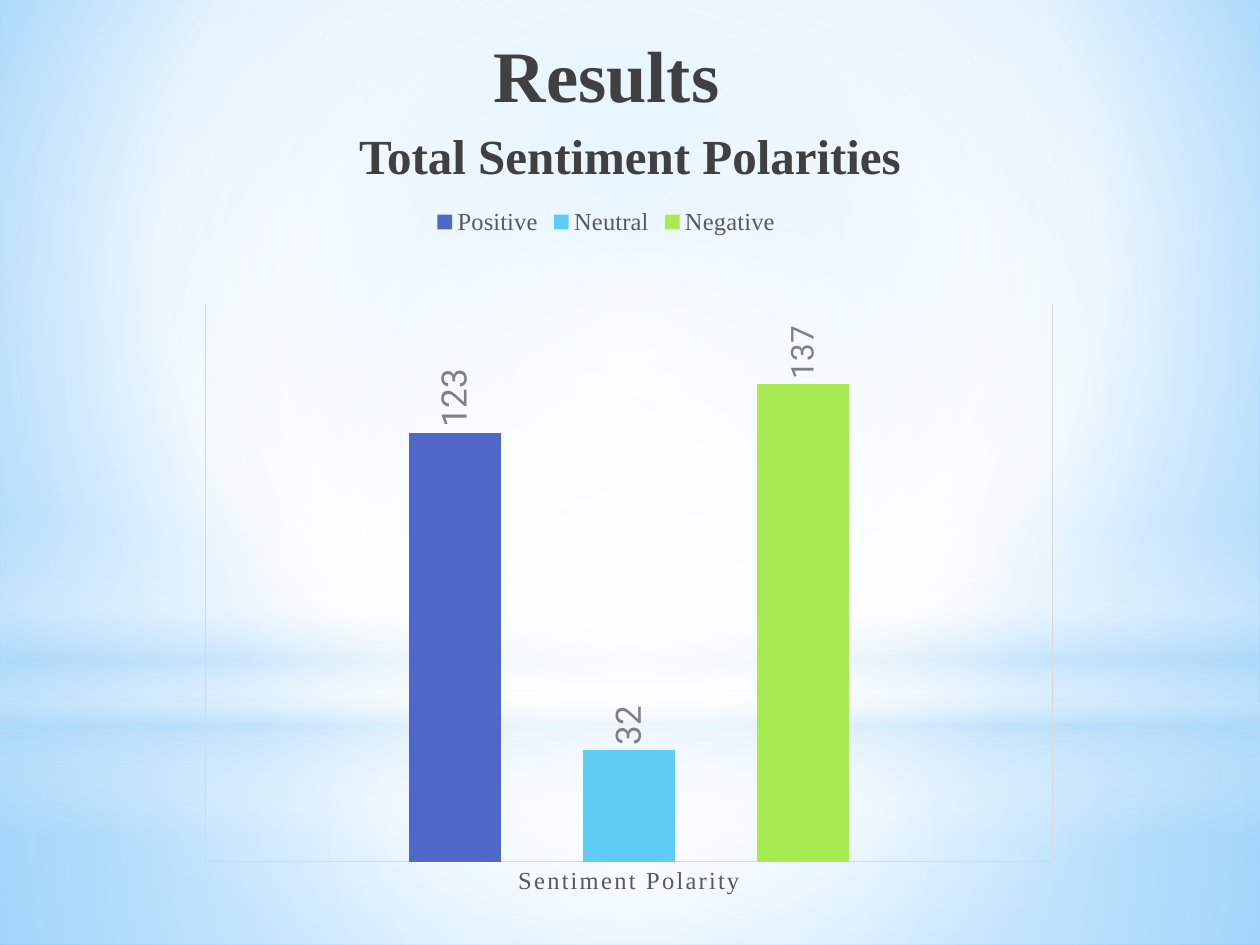
"""Build the Results slide with its sentiment polarity chart."""
import pptx
import pptx.chart.data
import pptx.dml.color
import pptx.enum.chart
import pptx.enum.shapes
import pptx.enum.text
import pptx.oxml
import pptx.oxml.ns
import pptx.util

Pt = pptx.util.Pt
qn = pptx.oxml.ns.qn
SERIF = "Times New Roman"
SHAPES = pptx.enum.shapes.MSO_SHAPE
CENTER = "50 50 50 50"
BANDS = [
    (SHAPES.RECTANGLE, (0, 401.8, 720, 138.2), CENTER,
     [(0, "FFFFFF", 91), (37, "FFFFFF", 76), (100, "B4DCFA", 79)]),
    (SHAPES.RECTANGLE, (0, 0, 720, 401.8), CENTER,
     [(0, "FFFFFF", 89), (48, "FFFFFF", 62), (100, "B4DCFA", 79)]),
    (SHAPES.RECTANGLE, (0, 296.6, 720, 180), None,
     [(0, "FFFFFF", 0), (29, "FFFFFF", 30), (45, "B4DCFA", 40),
      (55, "FFFFFF", 26), (65, "B4DCFA", 60), (100, "FFFFFF", 0)]),
    (SHAPES.OVAL, (0, 126, 720, 401.8), CENTER,
     [(0, "FFFFFF", 100), (56, "FFFFFF", 0)]),
]
SERIES = [
    ("Positive", 123, "4E67C8", 20),
    ("Neutral", 32, "5ECCF3", 20),
    ("Negative", 137, "A7EA52", 18),
]


def color(value):
    """Turn a hex string into a colour."""
    return pptx.dml.color.RGBColor.from_string(value)


def apply(target, values):
    """Set each attribute of the target from a dict."""
    for name, value in values.items():
        setattr(target, name, value)


def set_font(font, size, value, name=SERIF, bold=False):
    """Format a font."""
    apply(font, {"size": Pt(size), "name": name, "bold": bold})
    font.color.rgb = color(value)


def place(shape, box):
    """Move and size a shape by a box in points."""
    apply(shape, dict(zip(("left", "top", "width", "height"), map(Pt, box))))


def set_gradient(fill, element, stops, focus):
    """Fill with a circular gradient around a focus, or a vertical one."""
    fill.gradient()
    gradient = element.find(".//" + qn("a:gradFill"))
    stop_xml = "".join(
        f'<a:gs pos="{position * 1000}"><a:srgbClr val="{value}">'
        f'<a:alpha val="{alpha * 1000}"/></a:srgbClr></a:gs>'
        for position, value, alpha in stops)
    direction = '<a:lin ang="5400000" scaled="0"/>'
    if focus:
        left, top, right, bottom = (int(side) * 1000 for side in focus.split())
        direction = (f'<a:path path="circle"><a:fillToRect l="{left}" t="{top}" '
                     f'r="{right}" b="{bottom}"/></a:path>')
    source = pptx.oxml.parse_xml(
        f'<a:gradFill {pptx.oxml.ns.nsdecls("a")}>'
        f'<a:gsLst>{stop_xml}</a:gsLst>{direction}</a:gradFill>')
    gradient[:] = list(source)


def add_band(slide, index, kind, box, focus, stops):
    """Add a translucent gradient shape behind the placeholders."""
    shape = slide.shapes.add_shape(kind, *map(Pt, box))
    shape.shadow.inherit = False
    shape.line.fill.background()
    set_gradient(shape.fill, shape._element, stops, focus)
    slide.shapes._spTree.insert(2 + index, shape._element)


def fill_placeholder(shape, text, box, size, top, spacing):
    """Put one centred bold line into a placeholder."""
    place(shape, box)
    frame = shape.text_frame
    apply(frame, {"text": text, "word_wrap": True, "margin_top": Pt(top),
                  "auto_size": pptx.enum.text.MSO_AUTO_SIZE.NONE,
                  "vertical_anchor": pptx.enum.text.MSO_ANCHOR.TOP})
    paragraph = frame.paragraphs[0]
    apply(paragraph, {"alignment": pptx.enum.text.PP_ALIGN.CENTER, **spacing})
    set_font(paragraph.runs[0].font, size, "404040", bold=True)
    properties = paragraph._p.get_or_add_pPr()
    properties.set("marL", "0")
    properties.set("indent", "0")
    properties.append(pptx.oxml.parse_xml(
        f'<a:buNone {pptx.oxml.ns.nsdecls("a")}/>'))


def set_plot_layout(chart, x, y, width, height):
    """Fix the inner plot area as fractions of the chart."""
    area = chart._chartSpace.find(".//" + qn("c:plotArea"))
    for layout in area.findall(qn("c:layout")):
        area.remove(layout)
    sides = "".join(f'<c:{name} val="{value}"/>' for name, value in
                    (("x", x), ("y", y), ("w", width), ("h", height)))
    area.insert(0, pptx.oxml.parse_xml(
        f'<c:layout {pptx.oxml.ns.nsdecls("c")}><c:manualLayout>'
        '<c:layoutTarget val="inner"/><c:xMode val="edge"/>'
        f'<c:yMode val="edge"/>{sides}</c:manualLayout></c:layout>'))


def format_series(series, value, size):
    """Colour a series and show its value upright above the bar."""
    series.format.fill.solid()
    series.format.fill.fore_color.rgb = color(value)
    labels = series.data_labels
    apply(labels, {"show_value": True,
                   "position": pptx.enum.chart.XL_LABEL_POSITION.OUTSIDE_END})
    set_font(labels.font, size, "808080", "Roboto")
    labels._element.find(".//" + qn("a:bodyPr")).set("rot", "-5400000")


def format_axes(chart):
    """Format the category axis and hide the value axis."""
    axis = chart.category_axis
    none = pptx.enum.chart.XL_TICK_MARK.NONE
    apply(axis, {"major_tick_mark": none, "minor_tick_mark": none,
                 "has_major_gridlines": True})
    for line in (axis.format.line, axis.major_gridlines.format.line):
        line.width = Pt(0.75)
        line.color.rgb = color("D9D9D9")
    set_font(axis.tick_labels.font, 14, "595959")
    axis._element.find(".//" + qn("a:defRPr")).set("spc", "120")
    apply(chart.value_axis, {"visible": False, "has_major_gridlines": False,
                             "minimum_scale": 0, "maximum_scale": 160})


def add_polarity_chart(slide, box):
    """Add the clustered column chart of polarities."""
    data = pptx.chart.data.CategoryChartData()
    data.categories = ["Sentiment Polarity"]
    for name, count, _, _ in SERIES:
        data.add_series(name, [count])
    chart = slide.shapes.add_chart(
        pptx.enum.chart.XL_CHART_TYPE.COLUMN_CLUSTERED,
        *map(Pt, box), data).chart
    apply(chart, {"has_title": False, "has_legend": True})
    set_font(chart.font, 10, "000000", "Roboto")
    apply(chart.legend, {"include_in_layout": False,
                         "position": pptx.enum.chart.XL_LEGEND_POSITION.TOP})
    set_font(chart.legend.font, 14, "595959")
    plot = chart.plots[0]
    apply(plot, {"gap_width": 444, "overlap": -90, "vary_by_categories": False})
    for series, (_, _, value, size) in zip(plot.series, SERIES):
        format_series(series, value, size)
    format_axes(chart)
    set_plot_layout(chart, 0.051, 0.154, 0.949, 0.781)


def main():
    """Build and save the presentation."""
    presentation = pptx.Presentation()
    apply(presentation, {"slide_width": Pt(720), "slide_height": Pt(540)})
    slide = presentation.slides.add_slide(presentation.slide_layouts[1])
    set_gradient(slide.background.fill, slide._element,
                 [(0, "9ED5FF", 100), (60, "FFFFFF", 100), (100, "5BB9FF", 100)],
                 "20 10 20 60")
    for index, band in enumerate(BANDS):
        add_band(slide, index, *band)
    fill_placeholder(slide.shapes.title, "Results", (65.5, 9.4, 562.3, 49.7),
                     41.4, 8, {"space_before": Pt(0)})
    fill_placeholder(slide.placeholders[1], "Total Sentiment Polarities",
                     (87.8, 70.6, 544.3, 29.5), 28, 1,
                     {"space_before": Pt(5.6), "space_after": Pt(3)})
    add_polarity_chart(slide, (91.4, 110.9, 510.5, 408.2))
    presentation.save("out.pptx")


if __name__ == "__main__":
    main()
